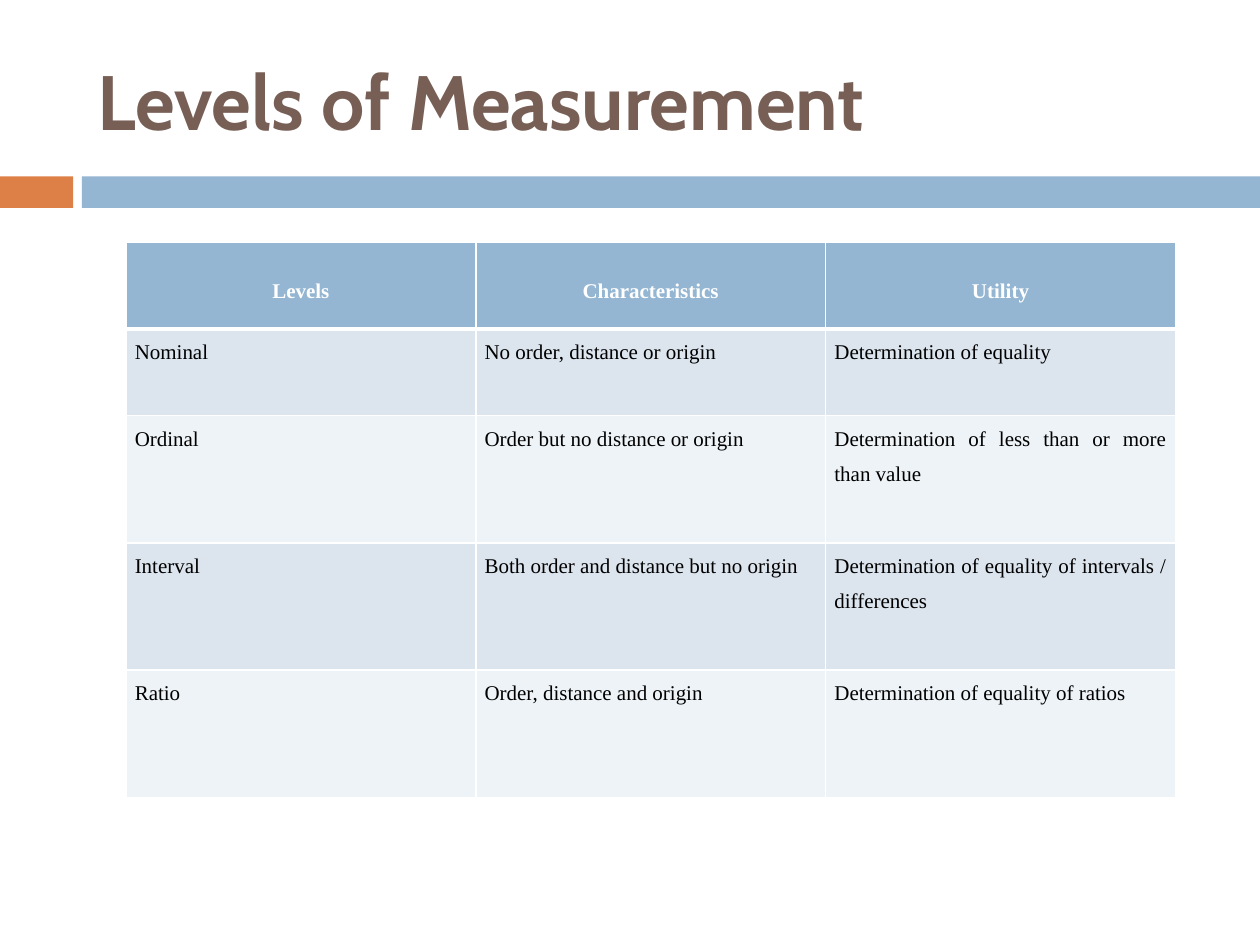
from lxml.etree import SubElement
from pptx import Presentation
from pptx.dml.color import RGBColor
from pptx.enum.shapes import MSO_SHAPE
from pptx.enum.text import MSO_ANCHOR, MSO_AUTO_SIZE, PP_ALIGN
from pptx.oxml.ns import qn
from pptx.util import Inches, Pt

WHITE = RGBColor(0xFF, 0xFF, 0xFF)
BLACK = RGBColor(0, 0, 0)
BROWN = RGBColor(0x77, 0x5F, 0x55)
ORANGE = RGBColor(0xDD, 0x80, 0x47)
BLUE = RGBColor(0x94, 0xB6, 0xD2)
BAND_DARK = RGBColor(0xDC, 0xE5, 0xEE)
BAND_LIGHT = RGBColor(0xEE, 0xF3, 0xF7)

TITLE_FONT = {"name": "Cabin", "size": Pt(44), "bold": True}
HEADER_FONT = {"name": "Times New Roman", "size": Pt(12), "bold": True}
BODY_FONT = {**HEADER_FONT, "bold": False}
CELL_FORMAT = {
    "margin_left": Inches(0.07),
    "margin_right": Inches(0.07),
    "margin_top": 0,
    "margin_bottom": 0,
}

ROW_HEIGHTS = (0.69, 0.69, 1.01, 1.01, 1.01)
LEVELS = (
    ("Levels", "Characteristics", "Utility"),
    ("Nominal", "No order, distance or origin", "Determination of equality"),
    ("Ordinal", "Order but no distance or origin",
     "Determination of less than or more than value"),
    ("Interval", "Both order and distance but no origin",
     "Determination of equality of intervals / differences"),
    ("Ratio", "Order, distance and origin", "Determination of equality of ratios"),
)


def apply_format(target, values):
    """Set each named attribute on the target."""
    for name, value in values.items():
        setattr(target, name, value)


def write_text(paragraph, text, font, color, alignment):
    """Write one formatted span into a paragraph."""
    span = paragraph.add_run()
    span.text = text
    apply_format(span.font, font)
    span.font.color.rgb = color
    paragraph.alignment = alignment


def add_title(page, left, top, width, height):
    """Place the page title in its box."""
    title = page.shapes.title
    apply_format(title, {"left": Inches(left), "top": Inches(top),
                         "width": Inches(width), "height": Inches(height)})
    apply_format(title.text_frame, {"vertical_anchor": MSO_ANCHOR.MIDDLE,
                                    "word_wrap": True,
                                    "auto_size": MSO_AUTO_SIZE.NONE})
    write_text(title.text_frame.paragraphs[0], "Levels of Measurement",
               TITLE_FONT, BROWN, PP_ALIGN.LEFT)


def add_divider(page, left, top, width, height):
    """Draw the short orange block and the long blue bar."""
    block, gap = 0.58, 0.07
    bar_start = block + gap
    for start, length, color in ((left, block, ORANGE),
                                 (left + bar_start, width - bar_start, BLUE)):
        bar = page.shapes.add_shape(MSO_SHAPE.RECTANGLE, Inches(start), Inches(top),
                                    Inches(length), Inches(height))
        bar.shadow.inherit = False
        bar.fill.solid()
        bar.fill.fore_color.rgb = color
        bar.line.fill.background()


def add_borders(cell, bottom, top):
    """Give a cell white borders with the given bottom and top widths."""
    properties = cell._tc.get_or_add_tcPr()
    for side, width in (("L", 1), ("R", 1), ("T", top), ("B", bottom)):
        line = SubElement(properties, qn(f"a:ln{side}"), w=str(Pt(width)))
        fill = SubElement(line, qn("a:solidFill"))
        SubElement(fill, qn("a:srgbClr"), val=str(WHITE))


def format_cell(cell, text, row):
    """Fill and write one cell as header or banded body."""
    header = row == 0
    apply_format(cell, CELL_FORMAT)
    cell.vertical_anchor = MSO_ANCHOR.MIDDLE if header else MSO_ANCHOR.TOP
    add_borders(cell, bottom=3 if header else 1, top=3 if row == 1 else 1)
    cell.fill.solid()
    band = BAND_DARK if row % 2 else BAND_LIGHT
    cell.fill.fore_color.rgb = BLUE if header else band
    paragraph = cell.text_frame.paragraphs[0]
    paragraph.line_spacing = 1.5
    if header:
        write_text(paragraph, text, HEADER_FONT, WHITE, PP_ALIGN.CENTER)
    else:
        write_text(paragraph, text, BODY_FONT, BLACK, PP_ALIGN.JUSTIFY)


def add_levels_table(page, left, top, width):
    """Build the table of levels with equal columns."""
    frame = page.shapes.add_table(len(LEVELS), len(LEVELS[0]), Inches(left), Inches(top),
                                  Inches(width), Inches(sum(ROW_HEIGHTS)))
    table = frame.table
    for row, (height, texts) in enumerate(zip(ROW_HEIGHTS, LEVELS)):
        table.rows[row].height = Inches(height)
        for column, text in enumerate(texts):
            format_cell(table.cell(row, column), text, row)


def main():
    """Build the deck and save it."""
    deck = Presentation()
    deck.slide_width, deck.slide_height = Inches(10), Inches(7.5)
    page = deck.slides.add_slide(deck.slide_layouts[5])
    add_divider(page, 0, 1.4, 10, 0.25)
    add_title(page, 0.67, 0.25, 8.92, 1.08)
    add_levels_table(page, 1, 1.92, 8.33)
    deck.save("out.pptx")


if __name__ == "__main__":
    main()
